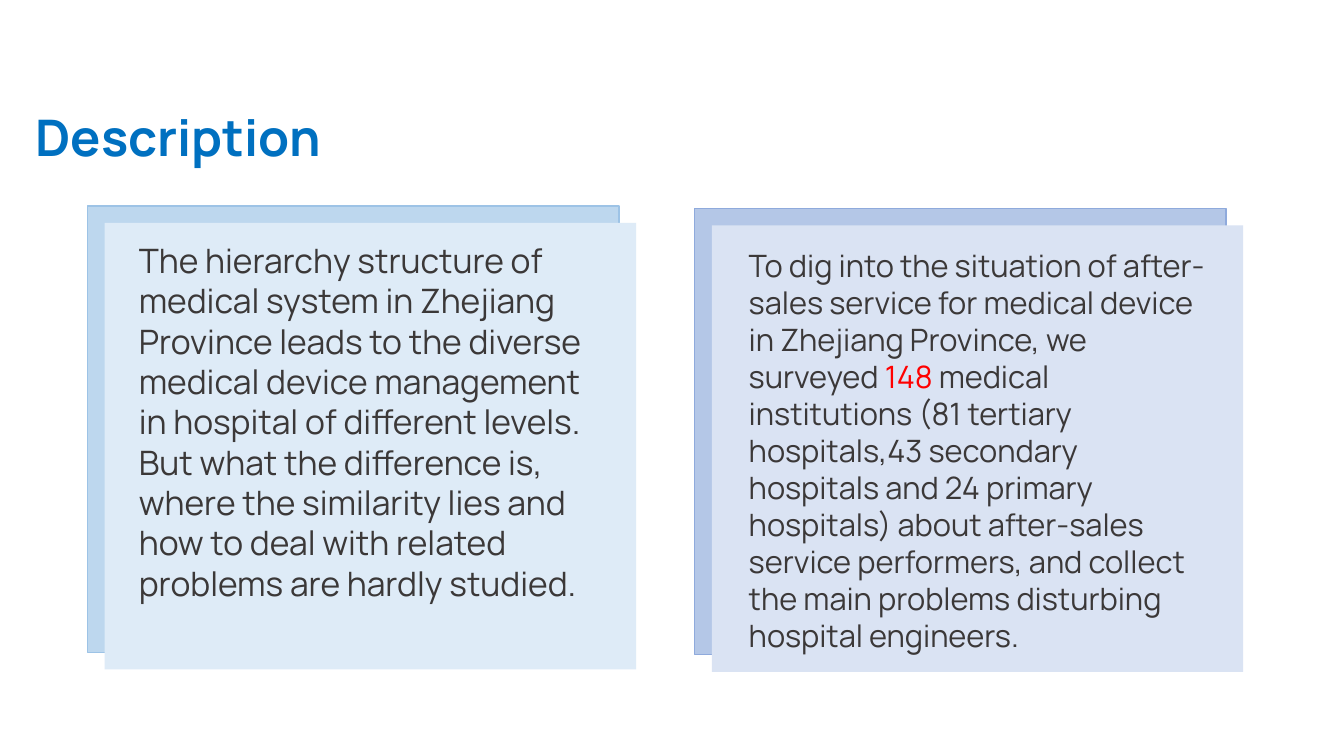
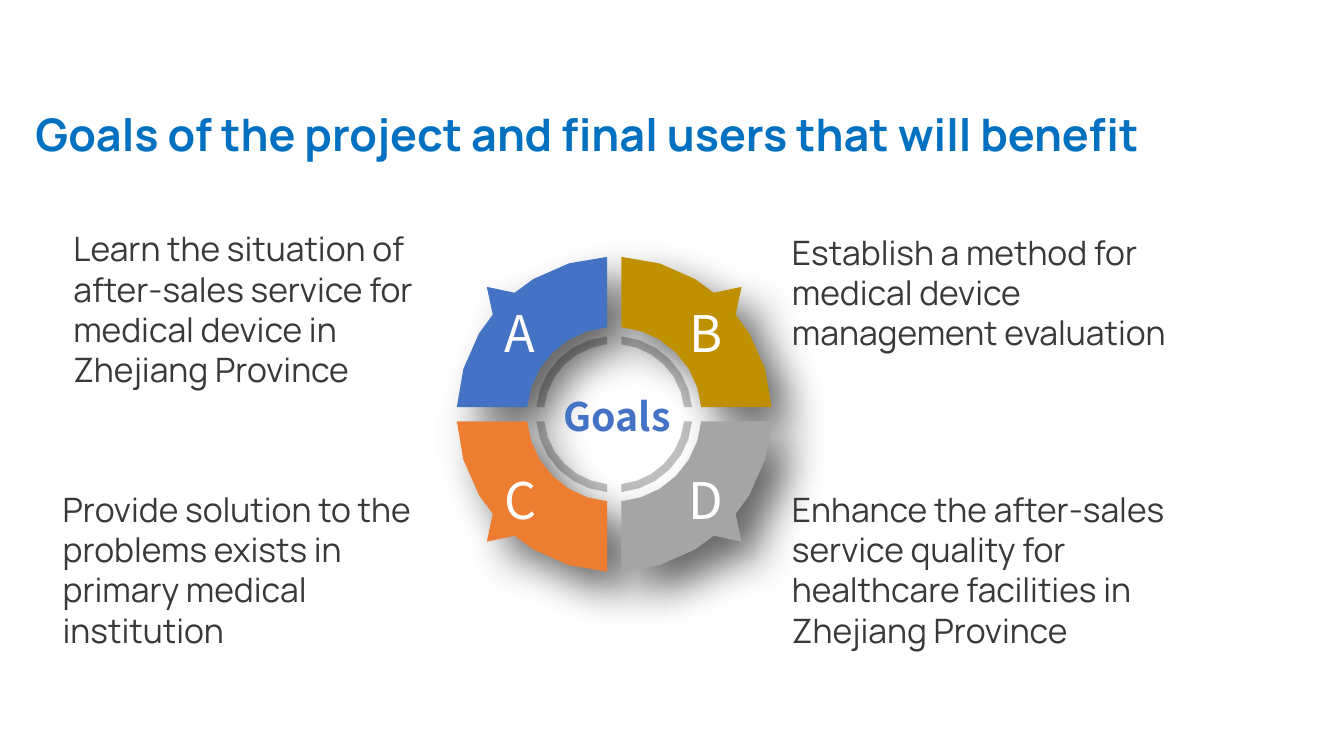
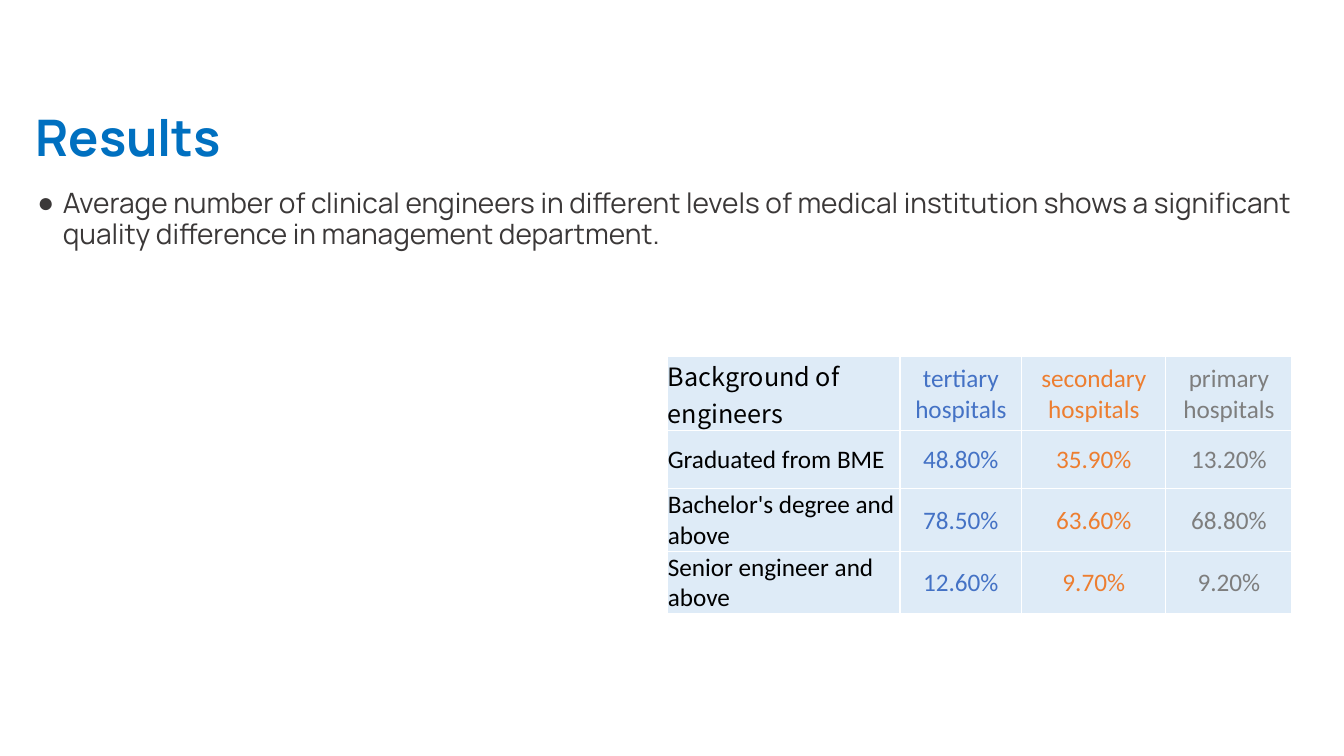
"""Build three slides about a survey of medical device after-sales service."""
from math import asin, cos, pi, sin

from pptx import Presentation
from pptx.dml.color import RGBColor
from pptx.enum.shapes import MSO_SHAPE as Shape
from pptx.enum.text import MSO_ANCHOR as Anchor, MSO_AUTO_SIZE as AutoSize, PP_ALIGN as Align
from pptx.oxml import parse_xml
from pptx.oxml.ns import nsdecls, qn
from pptx.util import Cm, Pt

TITLE_BLUE = RGBColor(0x00, 0x70, 0xC0)
TEXT_GREY = RGBColor(0x3B, 0x38, 0x38)
RED = RGBColor(0xFF, 0x00, 0x00)
WHITE = RGBColor(0xFF, 0xFF, 0xFF)
BLACK = RGBColor(0x00, 0x00, 0x00)
PALE_BLUE = RGBColor(0xDE, 0xEB, 0xF7)
SKY_BLUE = RGBColor(0xBD, 0xD7, 0xEE)
SKY_BORDER = RGBColor(0x9D, 0xC3, 0xE6)
PALE_INDIGO = RGBColor(0xDA, 0xE3, 0xF3)
INDIGO = RGBColor(0xB4, 0xC7, 0xE7)
INDIGO_BORDER = RGBColor(0x8F, 0xAA, 0xDC)
BLUE = RGBColor(0x44, 0x72, 0xC4)
GOLD = RGBColor(0xBF, 0x90, 0x00)
ORANGE = RGBColor(0xED, 0x7D, 0x31)
GREY = RGBColor(0xA5, 0xA5, 0xA5)
RING_GREY = RGBColor(0xBF, 0xBF, 0xBF)
TABLE_BLUE = RGBColor(0x44, 0x72, 0xC5)
TABLE_ORANGE = RGBColor(0xED, 0x7E, 0x30)
TABLE_GREY = RGBColor(0x7E, 0x7E, 0x7E)
MAIN_FONT = "Manrope"
WHEEL_FONT = "Noto Sans CJK SC"
TABLE_FONT = "Calibri"

CENTER_X, CENTER_Y = 15.48, 10.44
HALF_GAP = 0.18
WEDGE_OUTER, WEDGE_INNER = 3.97, 2.2
RING_OUTER, RING_INNER = 1.97, 1.77
POINTER = [(3.06, 2.51), (3.21, 3.21), (2.51, 3.06)]
ARC_STEPS = 6


def add_text(slide, left, top, width, height, pieces, size, font=MAIN_FONT):
    """Add a wrapped text box of (text, colour) pieces and return it."""
    box = slide.shapes.add_textbox(Cm(left), Cm(top), Cm(width), Cm(height))
    box.text_frame.word_wrap = True
    for text, color in pieces:
        run = box.text_frame.paragraphs[0].add_run()
        run.text = text
        run.font.name = font
        run.font.size = Pt(size)
        run.font.color.rgb = color
    return box


def quarter_arc(radius):
    """Return points of a quarter circle that stops at the gap on both sides."""
    start = asin(HALF_GAP / radius)
    step = (pi / 2 - 2 * start) / ARC_STEPS
    angles = [start + step * index for index in range(ARC_STEPS + 1)]
    return [(radius * cos(angle), radius * sin(angle)) for angle in angles]


presentation = Presentation()
presentation.slide_width = Cm(33.87)
presentation.slide_height = Cm(19.05)

slides = []
for layout_index, title_text, title_size, title_width in (
    (5, "Description", 36, 28.1),
    (5, "Goals of the project and final users that will benefit", 32, 33),
    (1, "Results", 36, 28.1),
):
    slide = presentation.slides.add_slide(presentation.slide_layouts[layout_index])
    title = slide.shapes.title
    title.left, title.top, title.width, title.height = Cm(0.64), Cm(2.72), Cm(title_width), Cm(2.54)
    title.text_frame.text = title_text
    title.text_frame.auto_size = AutoSize.NONE
    title.text_frame.vertical_anchor = Anchor.TOP
    paragraph = title.text_frame.paragraphs[0]
    paragraph.alignment = Align.LEFT
    paragraph.line_spacing = 0.9
    font = paragraph.runs[0].font
    font.name, font.size, font.bold = MAIN_FONT, Pt(title_size), True
    font.color.rgb = TITLE_BLUE
    slides.append(slide)
description, goals, results = slides

for left, top, back_color, border_color, front_color in (
    (2.21, 5.19, SKY_BLUE, SKY_BORDER, PALE_BLUE),
    (17.51, 5.25, INDIGO, INDIGO_BORDER, PALE_INDIGO),
):
    for offset, color in ((0, back_color), (0.43, front_color)):
        panel = description.shapes.add_shape(
            Shape.RECTANGLE, Cm(left + offset), Cm(top + offset), Cm(13.39), Cm(11.25))
        panel.shadow.inherit = False
        panel.fill.solid()
        panel.fill.fore_color.rgb = color
        if offset:
            panel.line.fill.background()
        else:
            panel.line.color.rgb = border_color
            panel.line.width = Pt(1)

add_text(description, 3.25, 5.92, 12, 9.47, [(
    "The hierarchy structure of medical system in Zhejiang Province leads to the diverse "
    "medical device management in hospital of different levels. But what the difference is, "
    "where the similarity lies and how to deal with related problems are hardly studied.",
    TEXT_GREY)], 24)
add_text(description, 18.62, 6.1, 12.04, 9.65, [
    ("To dig into the situation of after-sales service for medical device in Zhejiang Province, "
     "we surveyed ", TEXT_GREY),
    ("148", RED),
    (" medical institutions (81 tertiary hospitals,43 secondary hospitals and 24 primary "
     "hospitals) about after-sales service performers, and collect the main problems disturbing "
     "hospital engineers.", TEXT_GREY)], 22)

quadrants = (
    ("A", -1, -1, BLUE),
    ("C", -1, 1, ORANGE),
    ("B", 1, -1, GOLD),
    ("D", 1, 1, GREY),
)
ring_outline = quarter_arc(RING_OUTER) + quarter_arc(RING_INNER)[::-1]
wedge_outline = quarter_arc(WEDGE_OUTER) + quarter_arc(WEDGE_INNER)[::-1]
wedge_outline[ARC_STEPS // 2:ARC_STEPS // 2 + 1] = POINTER

ring_builder = None
wedge_builders = []
for letter, side_x, side_y, color in quadrants:
    ring_points, wedge_points = [
        [(Cm(CENTER_X + side_x * x), Cm(CENTER_Y + side_y * y)) for x, y in outline]
        for outline in (ring_outline, wedge_outline)]
    if ring_builder is None:
        ring_builder = goals.shapes.build_freeform(*ring_points[0])
    else:
        ring_builder.move_to(*ring_points[0])
    ring_builder.add_line_segments(ring_points[1:], close=True)
    wedge_builder = goals.shapes.build_freeform(*wedge_points[0])
    wedge_builder.add_line_segments(wedge_points[1:], close=True)
    wedge_builders.append((wedge_builder, color))

for builder, color in [(ring_builder, RING_GREY)] + wedge_builders:
    shape = builder.convert_to_shape()
    shape.shadow.inherit = False
    shape.fill.solid()
    shape.fill.fore_color.rgb = color
    shape.line.fill.background()
    if builder is not ring_builder:
        shape._element.spPr.find(qn("a:effectLst")).append(parse_xml(
            f'<a:outerShdw {nsdecls("a")} blurRad="{Pt(30)}" dist="{Pt(20)}" dir="2700000" '
            'algn="tl" rotWithShape="0"><a:srgbClr val="000000"><a:alpha val="60000"/>'
            '</a:srgbClr></a:outerShdw>'))

wheel_label = add_text(goals, 13.86, 9.75, 3.38, 1.45, [("Goals", BLUE)], 28, WHEEL_FONT)
wheel_label.text_frame.paragraphs[0].alignment = Align.CENTER
wheel_label.text_frame.paragraphs[0].runs[0].font.bold = True

for letter, side_x, side_y, color in quadrants:
    box = add_text(goals, CENTER_X + side_x * 2.34 - 0.73, CENTER_Y + side_y * 2.11 - 0.84,
                   1.4, 1.76, [(letter, WHITE)], 36, WHEEL_FONT)
    frame = box.text_frame
    frame.word_wrap = False
    frame.vertical_anchor = Anchor.MIDDLE
    frame.margin_left = frame.margin_right = Cm(0.2)
    frame.margin_top = frame.margin_bottom = Cm(0.1)
    frame.paragraphs[0].alignment = Align.CENTER

for left, top, width, height, text in (
    (1.6, 5.63, 10.39, 4.37,
     "Learn the situation of after-sales service for medical device in Zhejiang Province"),
    (19.71, 5.71, 11.4, 3.33, "Establish a method for medical device management evaluation"),
    (1.33, 12.19, 10.39, 3.33,
     "Provide solution to the problems exists in primary medical institution"),
    (19.71, 12.19, 11.4, 4.37,
     "Enhance the after-sales service quality for healthcare facilities in Zhejiang Province"),
):
    add_text(goals, left, top, width, height, [(text, TEXT_GREY)], 24)

body = results.placeholders[1]
body.left, body.top, body.width, body.height = Cm(0.69), Cm(4.65), Cm(32.66), Cm(11.84)
body.text_frame.text = (
    "Average number of clinical engineers in different levels of medical institution shows "
    "a significant quality difference in management department.")
body.text_frame.auto_size = AutoSize.NONE
paragraph = body.text_frame.paragraphs[0]
paragraph.line_spacing = 0.9
paragraph.space_before = Pt(0)
properties = paragraph._p.get_or_add_pPr()
properties.set("marL", str(Cm(0.64)))
properties.set("indent", str(-Cm(0.64)))
properties.append(parse_xml(f'<a:buChar {nsdecls("a")} char="●"/>'))
font = paragraph.runs[0].font
font.name, font.size = MAIN_FONT, Pt(20)
font.color.rgb = TEXT_GREY

table_rows = (
    ("Background of engineers", "tertiary hospitals", "secondary hospitals", "primary hospitals"),
    ("Graduated from BME", "48.80%", "35.90%", "13.20%"),
    ("Bachelor's degree and above", "78.50%", "63.60%", "68.80%"),
    ("Senior engineer and above", "12.60%", "9.70%", "9.20%"),
)
column_widths = (5.87, 3.07, 3.63, 3.18)
row_heights = (0.48, 1.47, 0.48, 0.48)
column_colors = (BLACK, TABLE_BLUE, TABLE_ORANGE, TABLE_GREY)
table_frame = results.shapes.add_table(4, 4, Cm(16.81), Cm(8.99), Cm(15.72), Cm(6.1))
table = table_frame.table
table.first_row = False
table.horz_banding = False
for column, width in zip(table.columns, column_widths):
    column.width = Cm(width)
for row_index, (row, height) in enumerate(zip(table.rows, row_heights)):
    row.height = Cm(height)
    for column_index, color in enumerate(column_colors):
        cell = table.cell(row_index, column_index)
        cell.text_frame.text = table_rows[row_index][column_index]
        cell.vertical_anchor = Anchor.MIDDLE
        cell.margin_left = cell.margin_right = cell.margin_top = Cm(0.02)
        cell.margin_bottom = Cm(0)
        for side in ("lnL", "lnR", "lnT", "lnB"):
            cell._tc.get_or_add_tcPr().append(parse_xml(
                f'<a:{side} {nsdecls("a")} w="{Pt(1)}"><a:solidFill>'
                f'<a:srgbClr val="{WHITE}"/></a:solidFill></a:{side}>'))
        cell.fill.solid()
        cell.fill.fore_color.rgb = PALE_BLUE
        paragraph = cell.text_frame.paragraphs[0]
        paragraph.alignment = Align.CENTER if column_index else Align.LEFT
        font = paragraph.runs[0].font
        font.name = TABLE_FONT if row_index or column_index else WHEEL_FONT
        font.size = Pt(18)
        font.color.rgb = color
table_frame.height = Cm(6.1)

presentation.save("out.pptx")
